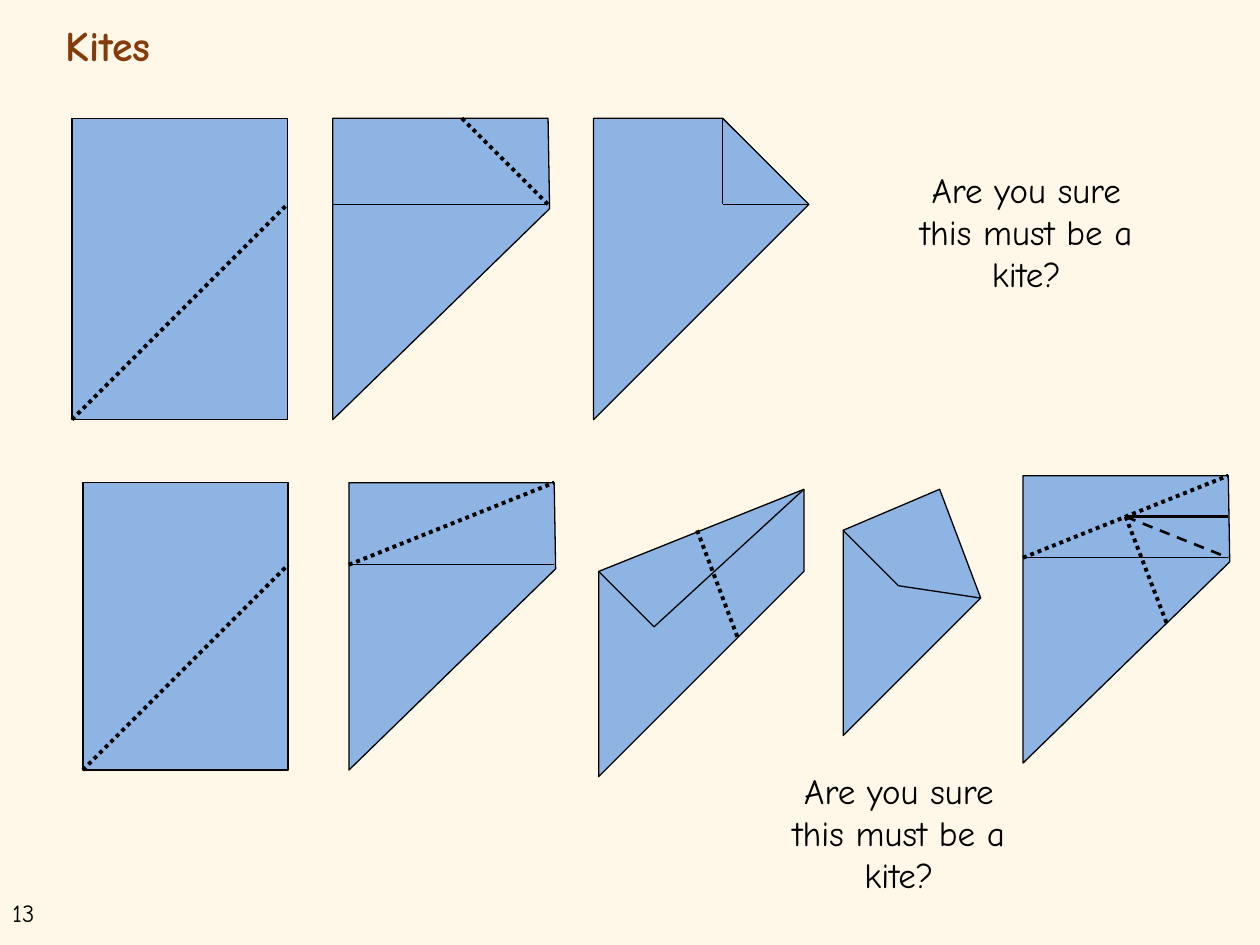
from lxml import etree
from pptx import Presentation
from pptx.dml.color import RGBColor
from pptx.enum.dml import MSO_LINE
from pptx.enum.shapes import MSO_CONNECTOR, MSO_SHAPE
from pptx.enum.text import MSO_ANCHOR, PP_ALIGN
from pptx.oxml.ns import qn
from pptx.util import Pt

STRAIGHT, RECT = MSO_CONNECTOR.STRAIGHT, MSO_SHAPE.RECTANGLE
DOT, DASH = MSO_LINE.ROUND_DOT, MSO_LINE.DASH
LEFT, CENTER, TOP = PP_ALIGN.LEFT, PP_ALIGN.CENTER, MSO_ANCHOR.TOP
FONT = "Comic Neue"
PAPER, INK, CREAM, BROWN = "8EB4E3", "000000", "FFF8E9", "843C0B"
RATIO, FOLD = 1.4, 0.4
DART = [(0, 0), (1, 0), (1.007, 0.42), (0, RATIO)]
QUESTION = "Are you sure this must be a kite?"


def color(value):
    """Return the colour for a hex string."""
    return RGBColor.from_string(value)


def put_text(sp, text, size=20, ink=INK, bold=False, align=LEFT, spacing=None):
    """Fill a shape with one formatted paragraph."""
    tf = sp.text_frame
    tf.word_wrap = True
    tf.vertical_anchor = TOP
    p = tf.paragraphs[0]
    p.alignment = align
    p.line_spacing = spacing
    r = p.add_run()
    r.text = text
    r.font.name, r.font.size, r.font.bold = FONT, Pt(size), bold
    r.font.color.rgb = color(ink)


def add_text(s, box, text, **fmt):
    """Add a text box at the given box."""
    put_text(s.shapes.add_textbox(*map(Pt, box)), text, **fmt)


def add_title(s, box, text):
    """Move and format the title placeholder."""
    sp = s.shapes.title
    sp.left, sp.top, sp.width, sp.height = map(Pt, box)
    put_text(sp, text, size=24, ink=BROWN, bold=True, spacing=0.9)


def style_paper(sp):
    """Give a sheet of paper its fill and edge."""
    sp.shadow.inherit = False
    sp.fill.solid()
    sp.fill.fore_color.rgb = color(PAPER)
    sp.line.color.rgb = color(INK)
    sp.line.width = Pt(0.75)


def add_line(shapes, start, end, width, dash):
    """Draw one straight crease or edge."""
    c = shapes.add_connector(STRAIGHT, *start, *end)
    c.line.color.rgb = color(INK)
    c.line.width = Pt(width)
    if dash:
        c.line.dash_style = dash
    etree.SubElement(c._element.spPr, qn("a:effectLst"))


def add_figure(s, left, top, size, outline=None, edges=(), folds=(), extra=()):
    """Draw a folded sheet whose points are in units of the paper width."""
    def at(point):
        return Pt(left + size * point[0]), Pt(top + size * point[1])

    shapes = s.shapes.add_group_shape().shapes
    if outline:
        builder = shapes.build_freeform(*at(outline[0]))
        builder.add_line_segments([at(point) for point in outline[1:]])
        sp = builder.convert_to_shape()
    else:
        sp = shapes.add_shape(RECT, *at((0, 0)), Pt(size), Pt(size * RATIO))
    style_paper(sp)
    lines = [(a, b, 0.75, None) for a, b in edges]
    lines += [(a, b, 2.25, DOT) for a, b in folds]
    for a, b, width, dash in [*lines, *extra]:
        add_line(shapes, at(a), at(b), width, dash)


def add_upper_row(s, left, top, size):
    """Draw the three steps of the first folding."""
    step = 149
    corner = (0.6, FOLD)
    add_figure(s, left, top, size, folds=[((0, RATIO), (1, FOLD))])
    add_figure(s, left + step, top, size, DART,
               edges=[((1, FOLD), (0, FOLD))], folds=[((0.6, 0), (1, FOLD))])
    add_figure(s, left + 2 * step, top, size,
               [(0, 0), (0.6, 0), (1, FOLD), (0, RATIO)],
               edges=[((0.6, 0), corner), (corner, (1, FOLD))])


def add_lower_row(s, left, top, size):
    """Draw the four steps of the second folding and its creases."""
    crease, diagonal = ((1, FOLD), (0, FOLD)), ((0, FOLD), (1, 0))
    flap, tip, centre = (0.27, 0.67), (0.27, 0.47), (0.5, 0.2)
    add_figure(s, left, top, size, folds=[((0, RATIO), (1, FOLD))])
    add_figure(s, left + 152, top, size, DART, [crease], [diagonal])
    add_figure(s, left + 294.7, top + 3.8, size,
               [(0, FOLD), (0, RATIO), (1, FOLD), (1, 0)],
               edges=[((0, FOLD), flap), (flap, (1, 0))],
               folds=[((0.48, 0.2), (0.68, 0.73))])
    add_figure(s, left + 434.4, top + 3.8, size,
               [(0, 1.2), (0, 0.2), (0.47, 0), (0.67, 0.53)],
               edges=[((0, 0.2), tip), ((0.67, 0.53), tip)])
    add_figure(s, left + 537.2, top - 4, size, DART, [crease],
               [diagonal, (centre, (0.7, 0.72))],
               [(centre, (1, FOLD), 1.5, DASH), (centre, (1, 0.2), 1.5, None)])


def main():
    """Build and save the slide."""
    prs = Presentation()
    prs.slide_width, prs.slide_height = Pt(720), Pt(540)
    s = prs.slides.add_slide(prs.slide_layouts[5])
    s.background.fill.solid()
    s.background.fill.fore_color.rgb = color(CREAM)
    add_title(s, (30.24, 10.8, 648, 47.5), "Kites")
    add_upper_row(s, 41.2, 67.6, 123)
    add_lower_row(s, 47.4, 275.8, 117.3)
    for left, top in [(513.4, 92.9), (440.6, 436.3)]:
        add_text(s, (left, top, 146.2, 80), QUESTION, align=CENTER)
    add_text(s, (0, 509.8, 38.2, 24.5), "13", size=14)
    prs.save("out.pptx")


if __name__ == "__main__":
    main()
